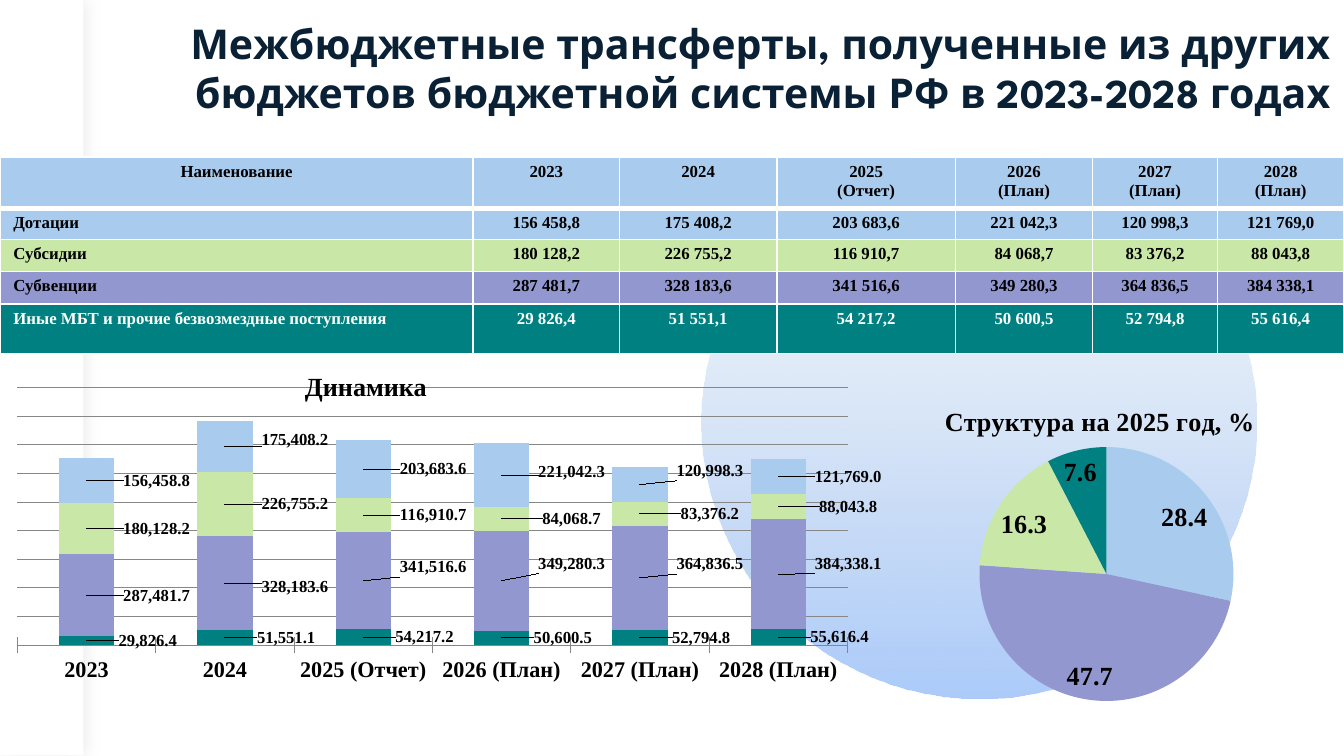
import pptx
import pptx.chart.data
import pptx.dml.color
import pptx.enum.chart
import pptx.enum.shapes
import pptx.enum.text
import pptx.oxml
import pptx.oxml.ns
import pptx.util
from pptx.util import Inches

COLORS = {
    "grants": "A9CCEE", "subsidies": "C9E7A7", "subventions": "9297CF",
    "other": "008080", "title": "0A2035", "black": "000000", "white": "FFFFFF",
    "grid": "878787", "circle_top": "B4CCE7", "circle_bottom": "ACCBF9",
}
SERIF = "Times New Roman"
DISPLAY = "League Spartan"
ALIGN = pptx.enum.text.PP_ALIGN
LABELS = pptx.enum.chart.XL_LABEL_POSITION

YEARS = ["2023", "2024", "2025 (Отчет)", "2026 (План)", "2027 (План)", "2028 (План)"]
TRANSFERS = {
    "grants": ("Дотации", [156458.8, 175408.2, 203683.6, 221042.3, 120998.3, 121769.0]),
    "subsidies": ("Субсидии", [180128.2, 226755.2, 116910.7, 84068.7, 83376.2, 88043.8]),
    "subventions": ("Субвенции", [287481.7, 328183.6, 341516.6, 349280.3, 364836.5, 384338.1]),
    "other": ("Иные МБТ и прочие безвозмездные поступления",
              [29826.4, 51551.1, 54217.2, 50600.5, 52794.8, 55616.4]),
}
SHARES = {"grants": 28.4, "subventions": 47.7, "subsidies": 16.3, "other": 7.6}
LABEL_SHIFTS = {
    "other": [(0.07, 0)] * 6,
    "subventions": [(0.08, y) for y in (0, 0.01, -0.04, -0.05, -0.04, -0.03)],
    "subsidies": [(0.08, 0)] * 6,
    "grants": [(0.08, y) for y in (0, -0.02, 0, -0.01, -0.04, 0)],
}
NO_LEADERS = (
    '<c:extLst><c:ext uri="{CE6537A1-D6FC-4f65-9D91-7224C49458BB}" '
    'xmlns:c15="http://schemas.microsoft.com/office/drawing/2012/chart">'
    '<c15:showLeaderLines val="0"/></c:ext></c:extLst>')


def rgb(name):
    return pptx.dml.color.RGBColor.from_string(COLORS[name])


def xml(text):
    namespaces = pptx.oxml.ns.nsdecls("a", "c")
    return pptx.oxml.parse_xml(f"<root {namespaces}>{text}</root>")[0]


def layout(x, y, before="", after=""):
    return xml(f'<c:layout><c:manualLayout>{before}<c:x val="{x}"/><c:y val="{y}"/>{after}'
               '</c:manualLayout></c:layout>')


EDGES = '<c:xMode val="edge"/><c:yMode val="edge"/>'


def replace_layout(parent, index, element):
    for old in parent.findall(pptx.oxml.ns.qn("c:layout")):
        parent.remove(old)
    parent.insert(index, element)


class SlideBuilder:
    def __init__(self, slide):
        self.slide = slide

    def style(self, font, size, color="black", name=SERIF):
        font.name = name
        font.size = pptx.util.Pt(size)
        font.bold = True
        font.color.rgb = rgb(color)

    def shape(self, kind, *box):
        shape = self.slide.shapes.add_shape(kind, *map(Inches, box))
        shape.shadow.inherit = False
        shape.line.fill.background()
        return shape

    def circle(self, *box):
        shape = self.shape(pptx.enum.shapes.MSO_SHAPE.OVAL, *box)
        shape.fill.gradient()
        shape.fill.gradient_angle = 270
        top, bottom = shape.fill.gradient_stops
        top.color.rgb = rgb("circle_top")
        bottom.color.rgb = rgb("circle_bottom")
        first_color = shape._element.spPr.find(".//" + pptx.oxml.ns.qn("a:srgbClr"))
        first_color.append(xml('<a:alpha val="0"/>'))

    def side_band(self, *box):
        shape = self.shape(pptx.enum.shapes.MSO_SHAPE.RECTANGLE, *box)
        shape.fill.solid()
        shape.fill.fore_color.rgb = rgb("white")
        effects = shape._element.spPr.find(pptx.oxml.ns.qn("a:effectLst"))
        effects.append(xml('<a:outerShdw blurRad="127000" dist="0" dir="0">'
                           '<a:srgbClr val="000000"><a:alpha val="10000"/></a:srgbClr></a:outerShdw>'))

    def text(self, box, text, size, color="black", name=SERIF, align=ALIGN.LEFT, wrap=True):
        text_frame = self.slide.shapes.add_textbox(*map(Inches, box)).text_frame
        text_frame.word_wrap = wrap
        text_frame.vertical_anchor = pptx.enum.text.MSO_ANCHOR.MIDDLE
        text_frame.text = text
        paragraph = text_frame.paragraphs[0]
        paragraph.alignment = align
        self.style(paragraph.runs[0].font, size, color, name)

    def cell(self, cell, text, fill, color, align, top, bottom):
        cell.margin_top = cell.margin_bottom = Inches(0.04)
        cell.text_frame.text = text
        for paragraph in cell.text_frame.paragraphs:
            paragraph.alignment = align
            self.style(paragraph.runs[0].font, 9, color)
        cell.fill.solid()
        cell.fill.fore_color.rgb = rgb(fill)
        properties = cell._tc.get_or_add_tcPr()
        for index, (side, width) in enumerate(zip("LRTB", (1, 1, top, bottom))):
            properties.insert(index, xml(
                f'<a:ln{side} w="{width * 12700}"><a:solidFill>'
                f'<a:srgbClr val="{COLORS["white"]}"/></a:solidFill></a:ln{side}>'))

    def table(self, box, rows, fills, widths, heights):
        table = self.slide.shapes.add_table(len(rows), len(widths), *map(Inches, box)).table
        for column, width in zip(table.columns, widths):
            column.width = Inches(width)
        for row, height in zip(table.rows, heights):
            row.height = Inches(height)
        for i, (values, fill) in enumerate(zip(rows, fills)):
            for j, value in enumerate(values):
                align = ALIGN.LEFT if i and not j else ALIGN.CENTER
                color = "white" if fill == "other" else "black"
                self.cell(table.cell(i, j), value, fill, color, align,
                          3 if i == 1 else 1, 3 if i == 0 else 1)

    def chart(self, kind, box, data, x, y, width, height):
        chart = self.slide.shapes.add_chart(kind, *map(Inches, box), data).chart
        chart.has_legend = False
        chart.has_title = False
        chart.font.name = DISPLAY
        chart.font.size = pptx.util.Pt(18)
        chart.font.color.rgb = rgb("black")
        replace_layout(chart._chartSpace.chart.plotArea, 0, layout(
            x, y, '<c:layoutTarget val="inner"/>' + EDGES,
            f'<c:w val="{width}"/><c:h val="{height}"/>'))
        return chart

    def labels(self, labels, size, number_format):
        labels.show_value = True
        labels.number_format = number_format
        labels.number_format_is_linked = False
        self.style(labels.font, size)

    def stacked_chart(self, box):
        data = pptx.chart.data.CategoryChartData(number_format="#,##0.0")
        data.categories = YEARS
        for number, key in enumerate(LABEL_SHIFTS, 1):
            data.add_series(f"Series {number}", TRANSFERS[key][1])
        chart = self.chart(pptx.enum.chart.XL_CHART_TYPE.COLUMN_STACKED, box, data,
                           0.02, 0.03, 0.95, 0.76)
        plot = chart.plots[0]
        plot.vary_by_categories = False
        plot.gap_width = 150
        plot.overlap = 100
        chart.value_axis.visible = False
        chart.value_axis.minimum_scale = 0
        chart.value_axis.maximum_scale = 900000
        chart.value_axis.major_unit = 100000
        chart.value_axis.tick_labels.number_format = "#,##0.0"
        chart.value_axis.tick_labels.number_format_is_linked = False
        axis = chart.category_axis
        axis.major_tick_mark = pptx.enum.chart.XL_TICK_MARK.CROSS
        self.style(axis.tick_labels.font, 12)
        for line in (axis.format.line, chart.value_axis.major_gridlines.format.line):
            line.color.rgb = rgb("grid")
            line.width = pptx.util.Pt(0.5)
        for (key, offsets), series in zip(LABEL_SHIFTS.items(), plot.series):
            series.format.fill.solid()
            series.format.fill.fore_color.rgb = rgb(key)
            self.labels(series.data_labels, 9, "#,##0.0")
            for index, offset in enumerate(offsets):
                self.style(series.points[index].data_label.font, 9)
                label = series._element.findall(".//" + pptx.oxml.ns.qn("c:dLbl"))[index]
                label[0].addnext(layout(*offset))
            series.data_labels._element.append(xml(NO_LEADERS))

    def pie_chart(self, box, title):
        data = pptx.chart.data.CategoryChartData(number_format="0.0")
        data.categories = [str(number) for number in range(1, len(SHARES) + 1)]
        data.add_series("Series 1", SHARES.values())
        chart = self.chart(pptx.enum.chart.XL_CHART_TYPE.PIE, box, data, 0.1, 0.21, 0.81, 0.7)
        chart.chart_title.text_frame.text = title
        self.style(chart.chart_title.text_frame.paragraphs[0].runs[0].font, 14)
        replace_layout(chart.chart_title._element, 1, layout(0.16, 0.08, EDGES))
        plot = chart.plots[0]
        plot.vary_by_categories = True
        series = plot.series[0]
        for index, key in enumerate(SHARES):
            fill = series.points[index].format.fill
            fill.solid()
            fill.fore_color.rgb = rgb(key)
        self.labels(series.data_labels, 14, "0.0")
        series.data_labels.position = LABELS.BEST_FIT


def main():
    presentation = pptx.Presentation()
    presentation.slide_width = Inches(10)
    presentation.slide_height = presentation.slide_width * 9 // 16
    builder = SlideBuilder(presentation.slides.add_slide(presentation.slide_layouts[6]))
    builder.circle(5.22, 1.08, 4.13, 4.12)
    builder.side_band(0, 0, 0.62, 5.62)
    builder.text((0, 0.14, 10, 0.72),
                 "Межбюджетные трансферты, полученные из других бюджетов бюджетной системы РФ "
                 "в 2023-2028 годах", 22, "title", DISPLAY, ALIGN.RIGHT)
    rows = [["Наименование"] + [year.replace(" ", "\n") for year in YEARS]]
    for name, values in TRANSFERS.values():
        rows.append([name] + [f"{value:,.1f}".replace(",", " ").replace(".", ",") for value in values])
    builder.table((0, 1.17, 10, 1.45), rows, ["grants", *TRANSFERS],
                  [3.52, 1.09, 1.17, 1.33, 1.02, 0.93, 0.94], [0.37, 0.23, 0.24, 0.24, 0.37])
    builder.stacked_chart((0, 2.81, 6.56, 2.52))
    builder.pie_chart((6.42, 2.76, 3.59, 2.7), "Структура на 2025 год, %")
    builder.text((2.17, 2.7, 1.25, 0.34), "Динамика", 14, wrap=False)
    presentation.save("out.pptx")


if __name__ == "__main__":
    main()
